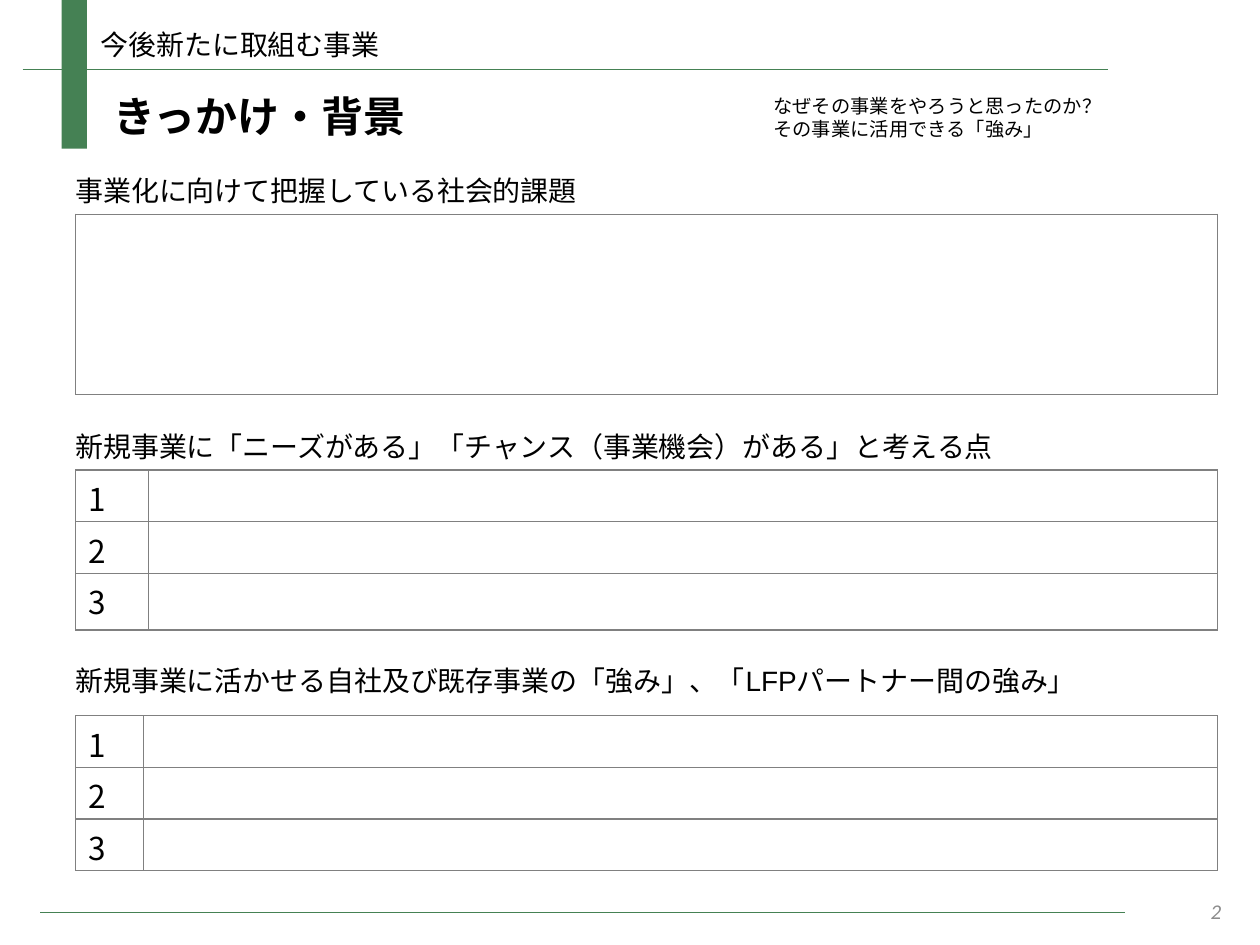
import pptx
import pptx.dml.color
import pptx.enum.shapes
import pptx.enum.text
import pptx.oxml
import pptx.oxml.ns
import pptx.util
from lxml import etree

RGBColor = pptx.dml.color.RGBColor
Inches = pptx.util.Inches
Pt = pptx.util.Pt
Align = pptx.enum.text.PP_ALIGN
Anchor = pptx.enum.text.MSO_ANCHOR

# Content
TITLE = "きっかけ・背景"
CATEGORY = "今後新たに取組む事業"
HINTS = ["なぜその事業をやろうと思ったのか？", "その事業に活用できる「強み」"]
PAGE_NUMBER = "2"
NUMBERS = ["1", "2", "3"]
# heading, heading top, table top, numbers, number column width, row heights
SECTIONS = [
    ("事業化に向けて把握している社会的課題", 1.33, 1.7, [], 0, [1.43]),
    ("新規事業に「ニーズがある」「チャンス（事業機会）がある」と考える点",
     3.36, 3.73, NUMBERS, 0.58, [0.41, 0.41, 0.45]),
    ("新規事業に活かせる自社及び既存事業の「強み」、「LFPパートナー間の強み」",
     5.22, 5.68, NUMBERS, 0.54, [0.41] * 3),
]

# Style
GREEN = RGBColor(0x45, 0x81, 0x54)
BORDER = RGBColor(0x80, 0x80, 0x80)
PAGE_GRAY = RGBColor(0x8C, 0x8C, 0x8C)
BLACK = RGBColor(0, 0, 0)
JAPANESE_FONT = "Noto Sans CJK JP"
TABLE_LEFT, TABLE_WIDTH = 0.6, 9.06
HEADING_LEFT, HEADING_WIDTH, HEADING_HEIGHT = 0.5, 8.9, 0.37
RULE_WIDTH = 8.61
RULES = [(0.18, 0.55), (0.32, 7.24)]

deck = pptx.Presentation()
deck.slide_width, deck.slide_height = Inches(10), Inches(7.5)
page = deck.slides.add_slide(deck.slide_layouts[5])


def write(frame, lines, size, font="Arial", color=BLACK, bold=False,
          italic=False, align=Align.LEFT):
    for index, line in enumerate(lines):
        para = frame.paragraphs[0] if index == 0 else frame.add_paragraph()
        para.alignment = align
        span = para.add_run()
        span.text = line
        span.font.name, span.font.size = font, Pt(size)
        span.font.bold, span.font.italic = bold, italic
        span.font.color.rgb = color
        east_asian = etree.SubElement(span.font._element, pptx.oxml.ns.qn("a:ea"))
        east_asian.set("typeface", JAPANESE_FONT)


def add_text(place, lines, size, anchor=Anchor.TOP, **style):
    box = page.shapes.add_textbox(*map(Inches, place))
    box.text_frame.word_wrap = True
    box.text_frame.vertical_anchor = anchor
    write(box.text_frame, lines, size, **style)


def set_borders(cell):
    properties = cell._tc.get_or_add_tcPr()
    for index, side in enumerate(("lnL", "lnR", "lnT", "lnB")):
        properties.insert(index, pptx.oxml.parse_xml(
            f'<a:{side} {pptx.oxml.ns.nsdecls("a")} w="{Pt(0.75)}"><a:solidFill>'
            f'<a:srgbClr val="{BORDER}"/></a:solidFill></a:{side}>'))


def add_grid(top, numbers, number_width, heights):
    widths = [number_width, TABLE_WIDTH - number_width] if numbers else [TABLE_WIDTH]
    place = map(Inches, (TABLE_LEFT, top, TABLE_WIDTH, sum(heights)))
    table = page.shapes.add_table(len(heights), len(widths), *place).table
    table.first_row = table.horz_banding = False
    for column, width in zip(table.columns, widths):
        column.width = Inches(width)
    for row, height in zip(table.rows, heights):
        row.height = Inches(height)
    for cell in table.iter_cells():
        cell.fill.background()
        cell.margin_top, cell.margin_bottom = Inches(0.04), 0
        set_borders(cell)
    for index, number in enumerate(numbers):
        write(table.cell(index, 0).text_frame, [number], 18, font=JAPANESE_FONT)


# Green bar and rules
bar = page.shapes.add_shape(pptx.enum.shapes.MSO_SHAPE.RECTANGLE,
                            *map(Inches, (0.49, 0, 0.2, 1.18)))
bar.shadow.inherit = False
bar.fill.solid()
bar.fill.fore_color.rgb = GREEN
bar.line.fill.background()
for left, top in RULES:
    rule = page.shapes.add_connector(
        pptx.enum.shapes.MSO_CONNECTOR.STRAIGHT,
        *map(Inches, (left, top, left + RULE_WIDTH, top)))
    rule.line.color.rgb = GREEN
    rule.line.width = Pt(0.75)
    etree.SubElement(rule._element.spPr, pptx.oxml.ns.qn("a:effectLst"))

# Title, category, hints and page number
title = page.shapes.title
title.left, title.top, title.width, title.height = map(Inches, (0.8, 0.67, 3.27, 0.5))
title.text_frame.vertical_anchor = Anchor.TOP
title.text_frame.auto_size = pptx.enum.text.MSO_AUTO_SIZE.NONE
write(title.text_frame, [TITLE], 24, bold=True)
add_text((0.7, 0.17, 3.76, 0.37), [CATEGORY], 16)
add_text((6.04, 0.7, 2.84, 0.47), HINTS, 11)
add_text((7.54, 7.03, 2.25, 0.4), [PAGE_NUMBER], 12, anchor=Anchor.MIDDLE,
         font="Calibri", color=PAGE_GRAY, italic=True, align=Align.RIGHT)

# Headed tables
for heading, heading_top, table_top, numbers, number_width, heights in SECTIONS:
    add_text((HEADING_LEFT, heading_top, HEADING_WIDTH, HEADING_HEIGHT), [heading], 16)
    add_grid(table_top, numbers, number_width, heights)

deck.save("out.pptx")
